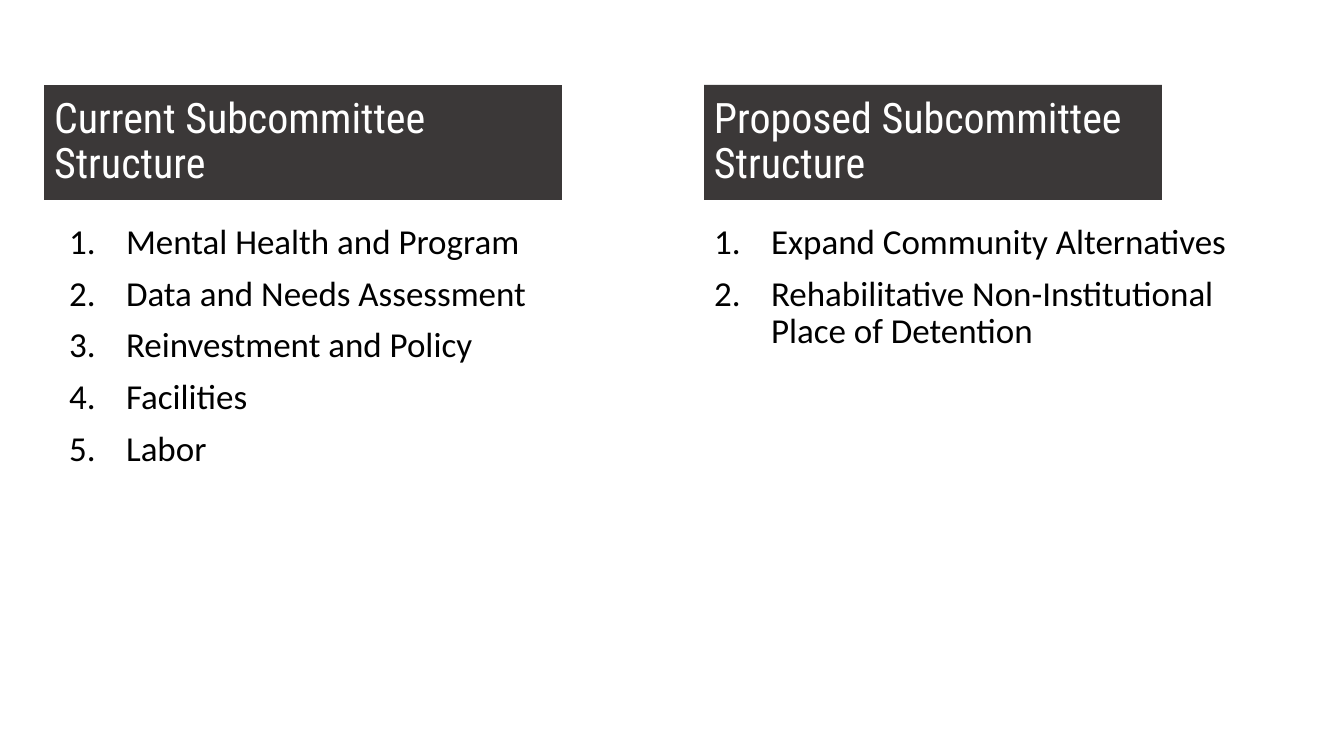
from lxml import etree
from pptx import Presentation
from pptx.dml.color import RGBColor
from pptx.enum.shapes import MSO_SHAPE
from pptx.enum.text import MSO_ANCHOR, MSO_AUTO_SIZE, PP_ALIGN
from pptx.oxml.ns import qn
from pptx.util import Pt

RECTANGLE = MSO_SHAPE.RECTANGLE
MIDDLE, TOP = MSO_ANCHOR.MIDDLE, MSO_ANCHOR.TOP
NO_AUTOFIT = MSO_AUTO_SIZE.NONE
LEFT = PP_ALIGN.LEFT
CHARCOAL = RGBColor(0x3B, 0x38, 0x38)
WHITE = RGBColor(0xFF, 0xFF, 0xFF)
BLACK = RGBColor(0x00, 0x00, 0x00)
EMU_PER_PX = 914400 / 100.8
NUMBER_INDENT = 57


def px(length):
    return round(length * EMU_PER_PX)


def fill_box(box, bounds, lines, anchor, font_name, size, color):
    box.left, box.top, box.width, box.height = map(px, bounds)
    frame = box.text_frame
    frame.text = "\n".join(lines)
    frame.word_wrap = True
    frame.auto_size = NO_AUTOFIT
    frame.vertical_anchor = anchor
    for index, para in enumerate(frame.paragraphs):
        if anchor == TOP:
            props = para._p.get_or_add_pPr()
            props.set("marL", str(px(NUMBER_INDENT)))
            props.set("indent", str(-px(NUMBER_INDENT)))
            etree.SubElement(props, qn("a:buFont"), typeface="+mj-lt")
            etree.SubElement(props, qn("a:buAutoNum"), type="arabicPeriod")
        para.alignment = LEFT
        para.line_spacing = 0.9
        para.space_before = Pt(10 if index else 0)
        para.font.name = font_name
        para.font.size = Pt(size)
        para.font.color.rgb = color


deck = Presentation()
deck.slide_width, deck.slide_height = px(1344), px(756)
page = deck.slides.add_slide(deck.slide_layouts[3])
current_list, proposed_list = page.placeholders[1], page.placeholders[2]
proposed_heading = page.shapes.add_shape(RECTANGLE, 0, 0, 0, 0)
proposed_heading.shadow.inherit = False

headings = [
    (page.shapes.title, (44, 85, 518, 115), "Current Subcommittee Structure"),
    (proposed_heading, (704, 85, 458, 115), "Proposed Subcommittee Structure"),
]
for box, bounds, heading in headings:
    fill_box(box, bounds, [heading], MIDDLE, "Roboto Condensed", 30, WHITE)
    box.fill.solid()
    box.fill.fore_color.rgb = CHARCOAL
    box.line.fill.background()

lists = [
    (current_list, (59, 219, 518, 480), [
        "Mental Health and Program",
        "Data and Needs Assessment",
        "Reinvestment and Policy",
        "Facilities",
        "Labor",
    ]),
    (proposed_list, (704, 219, 581, 374), [
        "Expand Community Alternatives",
        "Rehabilitative Non-Institutional Place of Detention",
    ]),
]
for box, bounds, subcommittees in lists:
    fill_box(box, bounds, subcommittees, TOP, "Calibri", 25, BLACK)

deck.save("out.pptx")
